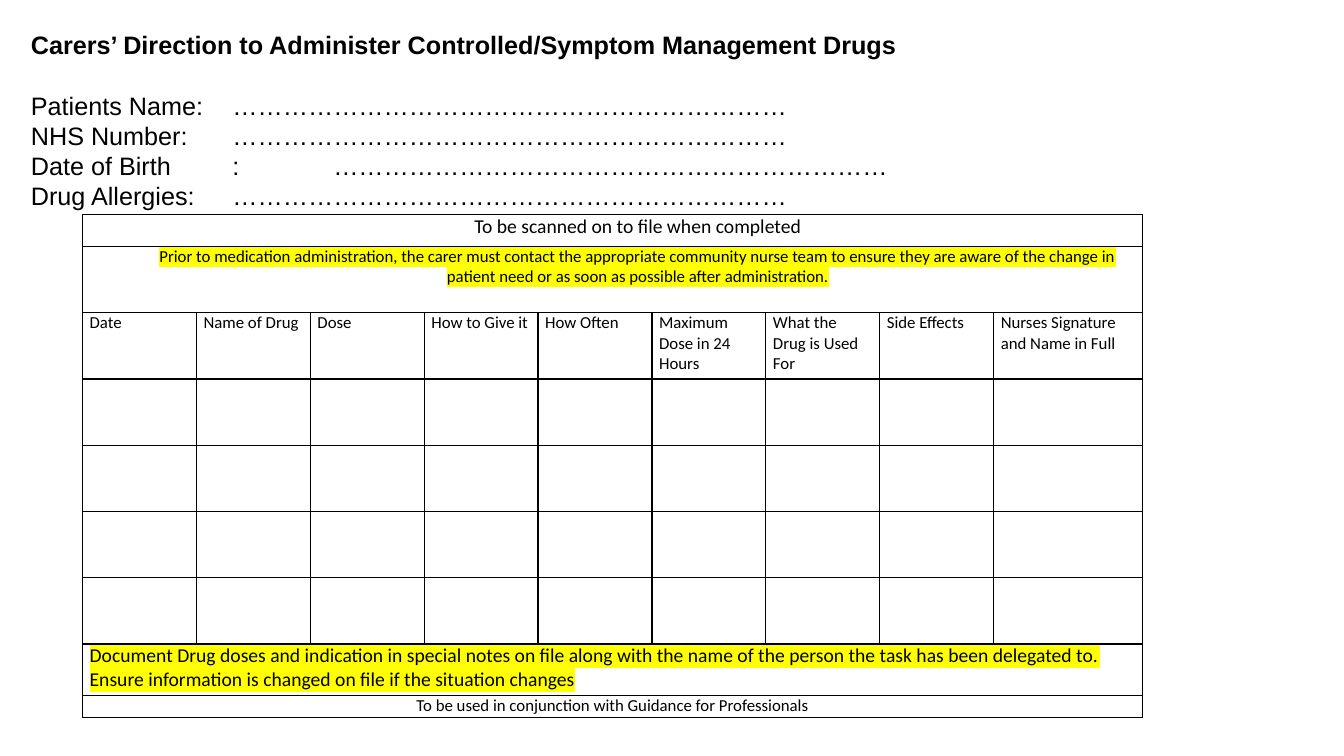
from dataclasses import dataclass

import pptx
import pptx.dml.color
import pptx.enum.text
import pptx.oxml
import pptx.oxml.ns
import pptx.util
from pptx.util import Cm, Pt

ALIGN = pptx.enum.text.PP_ALIGN
BLACK = "000000"
YELLOW = "FFFF00"
LINE_PITCH = Pt(21.5)
TAB_STOPS = [5.08, 7.62]

TITLE = "Carers’ Direction to Administer Controlled/Symptom Management Drugs"
DOTS = "…………………………………………………………"
PATIENT_FIELDS = ["Patients Name:\t", "NHS Number:\t", "Date of Birth\t:\t", "Drug Allergies:\t"]
HEADINGS = [
    "Date", "Name of Drug", "Dose", "How to Give it", "How Often",
    "Maximum Dose in 24 Hours", "What the Drug is Used For",
    "Side Effects", "Nurses Signature and Name in Full",
]
COLUMN_WIDTHS = [2.87] * 8 + [3.76]
ROW_HEIGHTS = [0.8] + [1.67] * 6 + [1.3, 0.56]
HEADING_ROW = 2


@dataclass
class Banner:
    """A row merged over the full width of the table."""
    row: int
    text: str
    size: float
    align: ALIGN = ALIGN.CENTER
    indent: float = 0
    highlight: str = ""


BANNERS = [
    Banner(0, "To be scanned on to file when completed", 14, indent=1.27),
    Banner(1, "Prior to medication administration, the carer must contact the appropriate "
              "community nurse team to ensure they are aware of the change in patient need "
              "or as soon as possible after administration.",
           12, indent=1.27, highlight=YELLOW),
    Banner(7, "Document Drug doses and indication in special notes on file along with the name "
              "of the person the task has been delegated to. Ensure information is changed "
              "on file if the situation changes",
           14, align=ALIGN.LEFT, highlight=YELLOW),
    Banner(8, "To be used in conjunction with Guidance for Professionals", 12),
]


def rgb(value: str) -> pptx.dml.color.RGBColor:
    return pptx.dml.color.RGBColor.from_string(value)


def xml(tag: str, attributes: str, content: str):
    return pptx.oxml.parse_xml(
        f'<a:{tag} {pptx.oxml.ns.nsdecls("a")} {attributes}>{content}</a:{tag}>')


def add_run(p, text: str, font: str, size: float, bold: bool = False, highlight: str = "") -> None:
    r = p.add_run()
    r.text = text
    r.font.name, r.font.size, r.font.bold = font, Pt(size), bold
    r.font.color.rgb = rgb(BLACK)
    if highlight:
        fill = r.font.fill._xPr.find(pptx.oxml.ns.qn("a:solidFill"))
        fill.addnext(xml("highlight", "", f'<a:srgbClr val="{highlight}"/>'))


def style_cell(cell) -> None:
    """Give a cell thin black borders, no fill and narrow margins."""
    cell.margin_left = cell.margin_right = Cm(0.18)
    cell.margin_top = cell.margin_bottom = 0
    tc_pr = cell._tc.get_or_add_tcPr()
    for side in "LRTB":
        tc_pr.append(xml(f"ln{side}", f'w="{Pt(1)}"',
                         f'<a:solidFill><a:srgbClr val="{BLACK}"/></a:solidFill>'))
    cell.fill.background()


def add_patient_details(s) -> None:
    tf = s.shapes.add_textbox(Cm(0.53), Cm(0.63), Cm(32.28), Cm(5.64)).text_frame
    tf.word_wrap = True
    p = tf.paragraphs[0]
    p.line_spacing = p.space_after = LINE_PITCH
    add_run(p, TITLE, "Arial", 18, bold=True)
    tabs = "".join(f'<a:tab pos="{Cm(stop)}" algn="l"/>' for stop in TAB_STOPS)
    for label in PATIENT_FIELDS:
        p = tf.add_paragraph()
        p.line_spacing = LINE_PITCH
        p._p.get_or_add_pPr().append(xml("tabLst", "", tabs))
        add_run(p, label + DOTS, "Arial", 18)


def add_drug_table(s) -> None:
    table = s.shapes.add_table(len(ROW_HEIGHTS), len(COLUMN_WIDTHS), Cm(2.08), Cm(5.41),
                               Cm(sum(COLUMN_WIDTHS)), Cm(sum(ROW_HEIGHTS))).table
    table.first_row = table.horz_banding = False
    for column, width in zip(table.columns, COLUMN_WIDTHS):
        column.width = Cm(width)
    for row, height in zip(table.rows, ROW_HEIGHTS):
        row.height = Cm(height)
    for cell in table.iter_cells():
        style_cell(cell)

    last = len(COLUMN_WIDTHS) - 1
    for banner in BANNERS:
        cell = table.cell(banner.row, 0)
        cell.merge(table.cell(banner.row, last))
        p = cell.text_frame.paragraphs[0]
        p.alignment = banner.align
        p._p.get_or_add_pPr().set("marL", str(Cm(banner.indent)))
        add_run(p, banner.text, "Calibri", banner.size, highlight=banner.highlight)
    for i, heading in enumerate(HEADINGS):
        add_run(table.cell(HEADING_ROW, i).text_frame.paragraphs[0], heading, "Calibri", 12)


def main() -> None:
    prs = pptx.Presentation()
    prs.slide_width, prs.slide_height = Cm(33.87), Cm(19.05)
    s = prs.slides.add_slide(prs.slide_layouts[6])
    add_patient_details(s)
    add_drug_table(s)
    prs.save("out.pptx")


if __name__ == "__main__":
    main()
